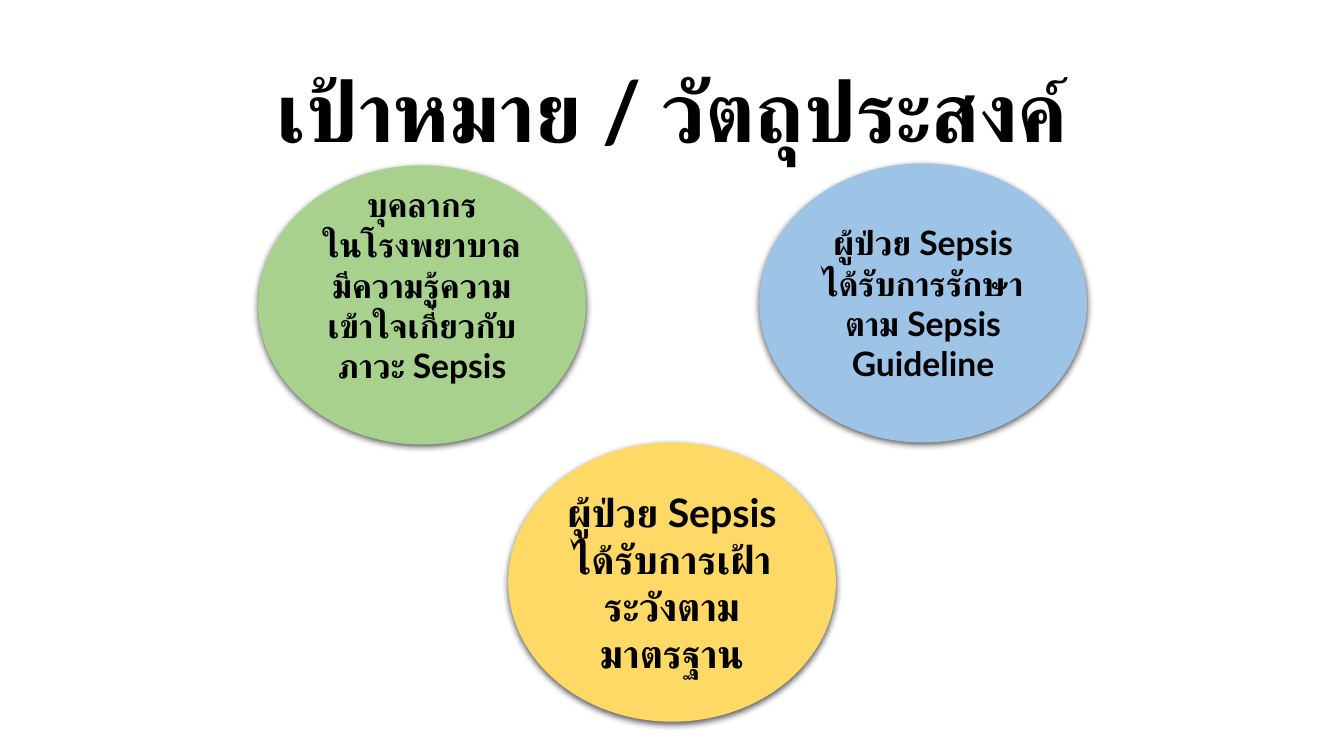
import pptx
import pptx.util
import pptx.dml.color
import pptx.enum.shapes
import pptx.enum.text
import pptx.oxml
import lxml.etree

WIDE, HIGH = 13.33, 7.5
FONT = "Lato"
TITLE = "เป้าหมาย / วัตถุประสงค์"
OVAL = (3.25, 2.77)
GOALS = [
    ("A9D18E", 2.56, 1.64, 24, 0.45,
     ["บุคลากร", "ในโรงพยาบาล", "มีความรู้ความเข้าใจเกี่ยวกับภาวะ Sepsis"]),
    ("9DC3E6", 7.53, 1.62, 24, 0.05,
     ["ผู้ป่วย Sepsis ได้รับการรักษาตาม Sepsis Guideline"]),
    ("FFD966", 5.04, 4.39, 28, 0.05,
     ["ผู้ป่วย Sepsis ได้รับการเฝ้าระวังตามมาตรฐาน"]),
]
NS = "http://schemas.openxmlformats.org/drawingml/2006/main"
SHADOW = f"""<a:effectLst xmlns:a="{NS}">
<a:outerShdw blurRad="57150" dist="19050" dir="5400000" algn="ctr" rotWithShape="0">
<a:srgbClr val="000000"><a:alpha val="63000"/></a:srgbClr>
</a:outerShdw></a:effectLst>"""


def paint(code):
    """Return the colour for a hex string."""
    return pptx.dml.color.RGBColor.from_string(code)


def write(frame, lines, size):
    """Fill a text frame with centred bold lines."""
    frame.word_wrap = True
    frame.text = "\n".join(lines)
    for para in frame.paragraphs:
        para.alignment = pptx.enum.text.PP_ALIGN.CENTER
        for run in para.runs:
            font = run.font
            font.name, font.bold = FONT, True
            font.size = pptx.util.Pt(size)
            font.color.rgb = paint("000000")
            mark = lxml.etree.SubElement(run._r.get_or_add_rPr(), f"{{{NS}}}cs")
            mark.set("typeface", FONT)


def draw(slide, goal):
    """Draw one goal as a shaded oval."""
    fill, left, top, size, base, lines = goal
    box = [pptx.util.Inches(n) for n in (left, top, *OVAL)]
    oval = slide.shapes.add_shape(pptx.enum.shapes.MSO_SHAPE.OVAL, *box)
    oval.fill.solid()
    oval.fill.fore_color.rgb = paint(fill)
    oval.line.fill.background()
    oval._element.spPr.append(pptx.oxml.parse_xml(SHADOW))
    frame = oval.text_frame
    write(frame, lines, size)
    frame.vertical_anchor = pptx.enum.text.MSO_ANCHOR.MIDDLE
    frame.margin_bottom = pptx.util.Inches(base)


def main():
    """Build and save the slide."""
    deck = pptx.Presentation()
    deck.slide_width = pptx.util.Inches(WIDE)
    deck.slide_height = pptx.util.Inches(HIGH)
    slide = deck.slides.add_slide(deck.slide_layouts[6])
    box = [pptx.util.Inches(n) for n in (0, 0.53, WIDE, 1.11)]
    write(slide.shapes.add_textbox(*box).text_frame, [TITLE], 60)
    for goal in GOALS:
        draw(slide, goal)
    deck.save("out.pptx")


if __name__ == "__main__":
    main()
